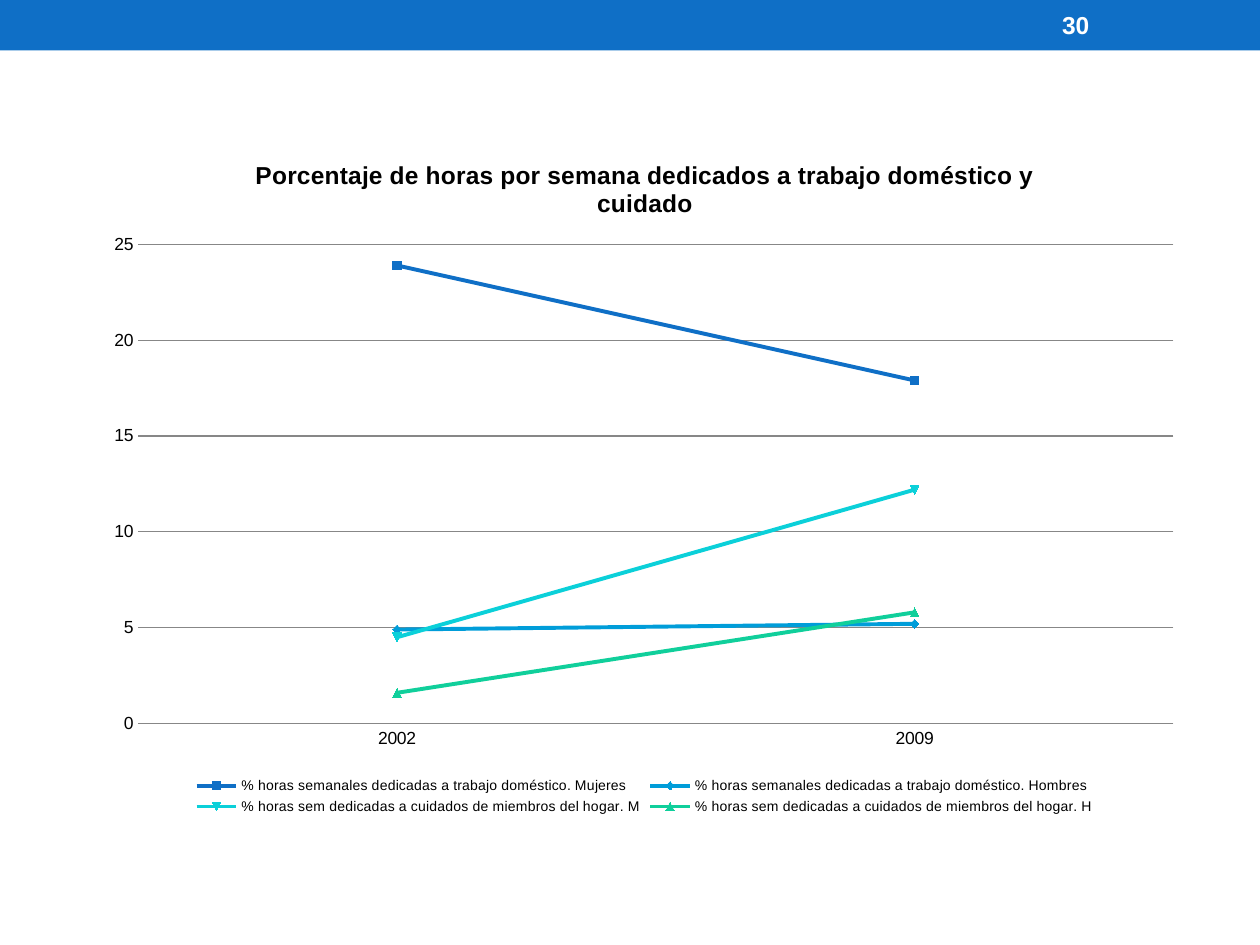
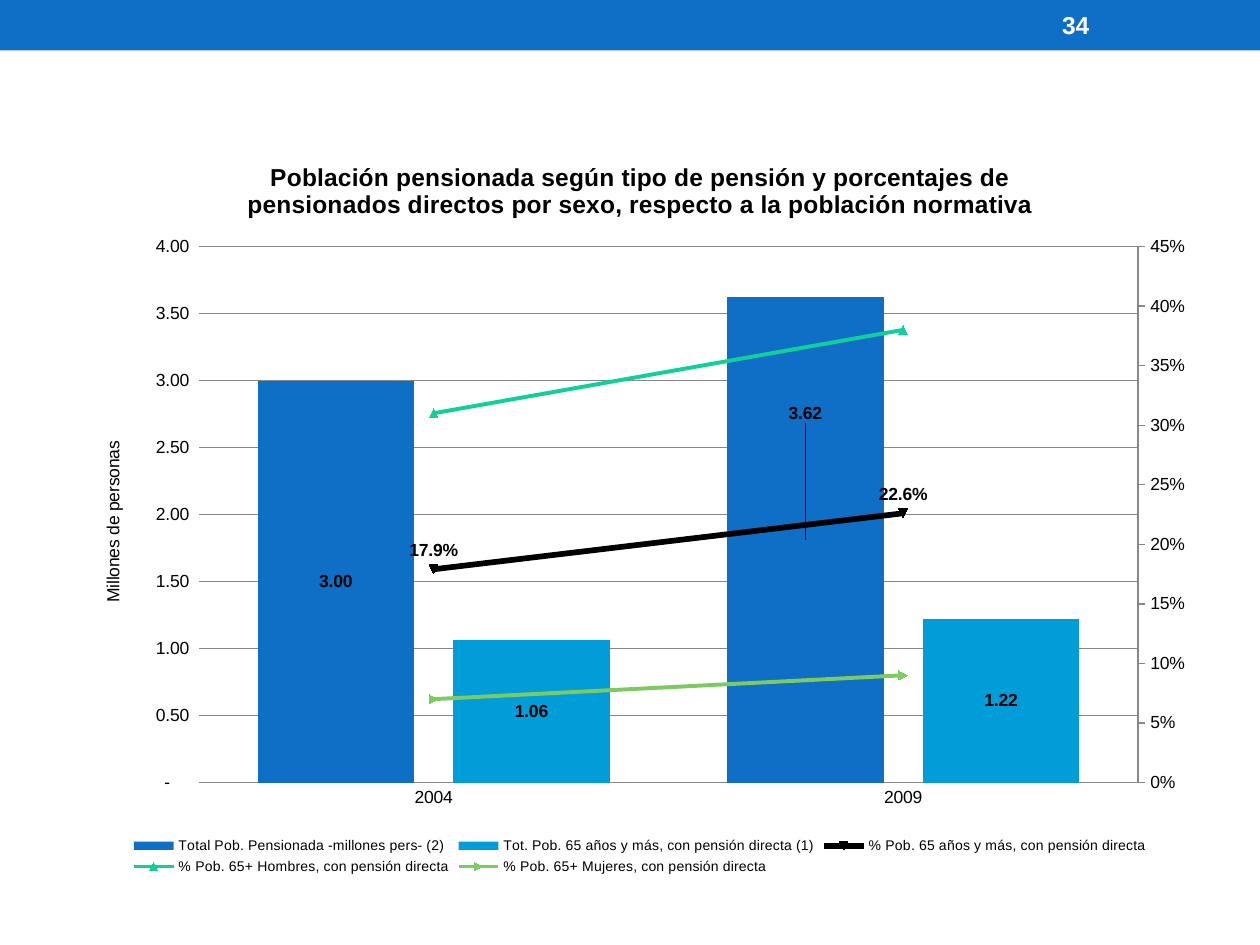
from pptx import Presentation
from pptx import util as u
from pptx.chart import axis as ax
from pptx.chart import data as cd
from pptx.dml import color as dml
from pptx.enum import chart as ch, shapes, text
from pptx.oxml import parse_xml
from pptx.oxml import ns

COLORS = {
    "blue": "0F6FC6", "sky": "009DD9", "cyan": "0BD0D9", "teal": "10CF9B",
    "green": "7CCA62", "black": "000000", "white": "FFFFFF", "grid": "878787",
}
NONE, OUT = ch.XL_TICK_MARK.NONE, ch.XL_TICK_MARK.OUTSIDE
CENTER, ABOVE = ch.XL_LABEL_POSITION.CENTER, ch.XL_LABEL_POSITION.ABOVE
MILLIONS = '_(* #,##0.00_);_(* \\(#,##0.00\\);_(* "-"??_);_(@_)'


def rgb(name):
    return dml.RGBColor.from_string(COLORS[name])


def assign(target, **values):
    for key, value in values.items():
        setattr(target, key, value)


def chart_xml(tag, body):
    return parse_xml(f'<c:{tag} {ns.nsdecls("c")}>{body}</c:{tag}>')


def layout_xml(place, modes=""):
    sizes = "".join(f'<c:{k} val="{v}"/>' for k, v in zip("xywh", place))
    return chart_xml("layout", f"<c:manualLayout>{modes}{sizes}</c:manualLayout>")


class Deck:
    def __init__(self, font="Arial"):
        self.font = font
        self.prs = Presentation()
        assign(self.prs, slide_width=u.Cm(25.4), slide_height=u.Cm(19.05))

    def type_style(self, font, size, color="black", bold=False):
        assign(font, name=self.font, size=u.Pt(size), bold=bold)
        font.color.rgb = rgb(color)

    def add_slide(self, number):
        self.slide = self.prs.slides.add_slide(self.prs.slide_layouts[6])
        self.band()
        self.page_number(number)

    def band(self):
        band = self.slide.shapes.add_shape(
            shapes.MSO_SHAPE.RECTANGLE, 0, 0, u.Cm(25.4), u.Cm(1.02))
        band.shadow.inherit = False
        band.fill.solid()
        band.fill.fore_color.rgb = rgb("blue")
        band.line.fill.background()

    def page_number(self, number):
        place = [u.Cm(v) for v in (21.16, 0.05, 2.97, 0.91)]
        frame = self.slide.shapes.add_textbox(*place).text_frame
        assign(frame, word_wrap=True, vertical_anchor=text.MSO_ANCHOR.MIDDLE)
        run = frame.paragraphs[0].add_run()
        run.text = str(number)
        self.type_style(run.font, 14, "white", True)

    def chart(self, kind, place, title, years, series, plot_place):
        table = cd.CategoryChartData()
        table.categories = years
        for name, values in series:
            table.add_series(name, values)
        chart = self.slide.shapes.add_chart(
            kind, *[u.Cm(v) for v in place], table).chart
        self.type_style(chart.font, 10)
        assign(chart, has_title=True, has_legend=True)
        self.chart_text(chart.chart_title, title, 14, True)
        assign(chart.legend, position=ch.XL_LEGEND_POSITION.BOTTOM,
               include_in_layout=False)
        self.type_style(chart.legend.font, 8)
        chart.plots[0].vary_by_categories = False
        self.plot_area(chart, plot_place)
        return chart

    def chart_text(self, holder, words, size, bold=False):
        holder.text_frame.text = words
        self.type_style(holder.text_frame.paragraphs[0].runs[0].font, size, bold=bold)

    def plot_area(self, chart, place):
        area = chart._chartSpace.chart.plotArea
        for old in area.findall(ns.qn("c:layout")):
            area.remove(old)
        modes = '<c:layoutTarget val="inner"/><c:xMode val="edge"/><c:yMode val="edge"/>'
        area.insert(0, layout_xml(place, modes))

    def axis(self, axis, number_format=None, top=None, tick=NONE, line=True, grid=False):
        assign(axis, major_tick_mark=tick, minor_tick_mark=NONE,
               has_major_gridlines=grid)
        lines = [axis.format.line] if line else []
        if grid:
            lines.append(axis.major_gridlines.format.line)
        for rule in lines:
            rule.color.rgb = rgb("grid")
            rule.width = u.Pt(0.75)
        if not line:
            axis.format.line.fill.background()
        if number_format:
            assign(axis, minimum_scale=0, maximum_scale=top)
            assign(axis.tick_labels, number_format=number_format,
                   number_format_is_linked=False)

    def axis_title(self, axis, words):
        axis.has_title = True
        self.chart_text(axis.axis_title, words, 10)
        axis.axis_title.text_frame._txBody.bodyPr.set("rot", "-5400000")

    def line(self, series, color, width=2.25):
        series.smooth = False
        series.format.line.color.rgb = rgb(color)
        series.format.line.width = u.Pt(width)
        assign(series.marker, style=ch.XL_MARKER_STYLE.AUTOMATIC, size=5)
        series.marker.format.fill.solid()
        series.marker.format.fill.fore_color.rgb = rgb(color)
        series.marker.format.line.color.rgb = rgb(color)

    def column(self, series, color):
        series.format.fill.solid()
        series.format.fill.fore_color.rgb = rgb(color)

    def labels(self, series, number_format, position):
        labels = series.data_labels
        assign(labels, show_value=True, number_format=number_format,
               number_format_is_linked=False, position=position)
        self.type_style(labels.font, 10, bold=True)

    def shift_label(self, series, index, offset):
        label = series.points[index].data_label
        label.position = CENTER
        self.type_style(label.font, 10, bold=True)
        for entry in series.data_labels._element.findall(ns.qn("c:dLbl")):
            entry.find(ns.qn("c:idx")).addnext(layout_xml(offset))

    def lines_on_right_axis(self, chart, first):
        area = chart._chartSpace.chart.plotArea
        columns = area.find(ns.qn("c:barChart"))
        lines = chart_xml(
            "lineChart",
            '<c:grouping val="standard"/><c:varyColors val="0"/>'
            '<c:marker val="1"/><c:axId val="5001"/><c:axId val="5002"/>')
        for series in columns.findall(ns.qn("c:ser"))[first:]:
            for flag in series.findall(ns.qn("c:invertIfNegative")):
                series.remove(flag)
            lines.find(ns.qn("c:marker")).addprevious(series)
        columns.addnext(lines)

        def axis_xml(tag, own, other, hidden, side, crosses):
            return chart_xml(
                tag,
                f'<c:axId val="{own}"/><c:scaling><c:orientation val="minMax"/></c:scaling>'
                f'<c:delete val="{hidden}"/><c:axPos val="{side}"/>'
                '<c:tickLblPos val="nextTo"/>'
                f'<c:crossAx val="{other}"/><c:crosses val="{crosses}"/>')

        right = axis_xml("valAx", 5002, 5001, 0, "r", "max")
        hidden = axis_xml("catAx", 5001, 5002, 1, "b", "autoZero")
        area.findall(ns.qn("c:valAx"))[-1].addnext(right)
        right.addnext(hidden)
        return ax.ValueAxis(right)


def domestic_work(deck):
    deck.add_slide(30)
    hours = [
        ("% horas semanales dedicadas a trabajo doméstico. Mujeres", (23.9, 17.9)),
        ("% horas semanales dedicadas a trabajo doméstico. Hombres", (4.9, 5.2)),
        ("% horas sem dedicadas a cuidados de miembros del hogar. M", (4.5, 12.2)),
        ("% horas sem dedicadas a cuidados de miembros del hogar. H", (1.6, 5.8)),
    ]
    chart = deck.chart(
        ch.XL_CHART_TYPE.LINE_MARKERS, (1.9, 2.72, 22.2, 13.8),
        "Porcentaje de horas por semana dedicados a trabajo doméstico y cuidado",
        ("2002", "2009"), hours, (0.04, 0.16, 0.94, 0.7))
    deck.axis(chart.category_axis)
    deck.axis(chart.value_axis, "#,##0", 25, line=False, grid=True)
    for series, color in zip(chart.plots[0].series, ("blue", "sky", "cyan", "teal")):
        deck.line(series, color)


def pensions(deck):
    deck.add_slide(34)
    pensioners = [
        ("Total Pob. Pensionada -millones pers- (2)", (3.00, 3.62)),
        ("Tot. Pob. 65 años y más, con pensión directa (1)", (1.06, 1.22)),
        ("% Pob. 65 años y más, con pensión directa", (0.179, 0.226)),
        ("% Pob. 65+ Hombres, con pensión directa", (0.31, 0.38)),
        ("% Pob. 65+ Mujeres, con pensión directa", (0.07, 0.09)),
    ]
    chart = deck.chart(
        ch.XL_CHART_TYPE.COLUMN_CLUSTERED, (1.5, 2.72, 22.81, 15.01),
        "Población pensionada según tipo de pensión y porcentajes de pensionados "
        "directos por sexo, respecto a la población normativa",
        ("2004", "2009"), pensioners, (0.11, 0.15, 0.83, 0.72))
    millions_axis = chart.value_axis
    share_axis = deck.lines_on_right_axis(chart, 2)
    deck.axis(chart.category_axis)
    deck.axis(millions_axis, MILLIONS, 4, line=False, grid=True)
    deck.axis_title(millions_axis, "Millones de personas")
    deck.axis(share_axis, "0%", 0.45, tick=OUT)
    people, shares = chart.plots
    assign(people, gap_width=75, overlap=-25)
    for series, color in zip(people.series, ("blue", "sky")):
        deck.column(series, color)
        deck.labels(series, "0.00", CENTER)
    deck.shift_label(people.series[0], 1, (0, -0.17))
    for series, color, width in zip(
            shares.series, ("black", "teal", "green"), (3.25, 2.25, 2.25)):
        deck.line(series, color, width)
    deck.labels(shares.series[0], "0.0%", ABOVE)


def main():
    deck = Deck()
    domestic_work(deck)
    pensions(deck)
    deck.prs.save("out.pptx")


if __name__ == "__main__":
    main()
